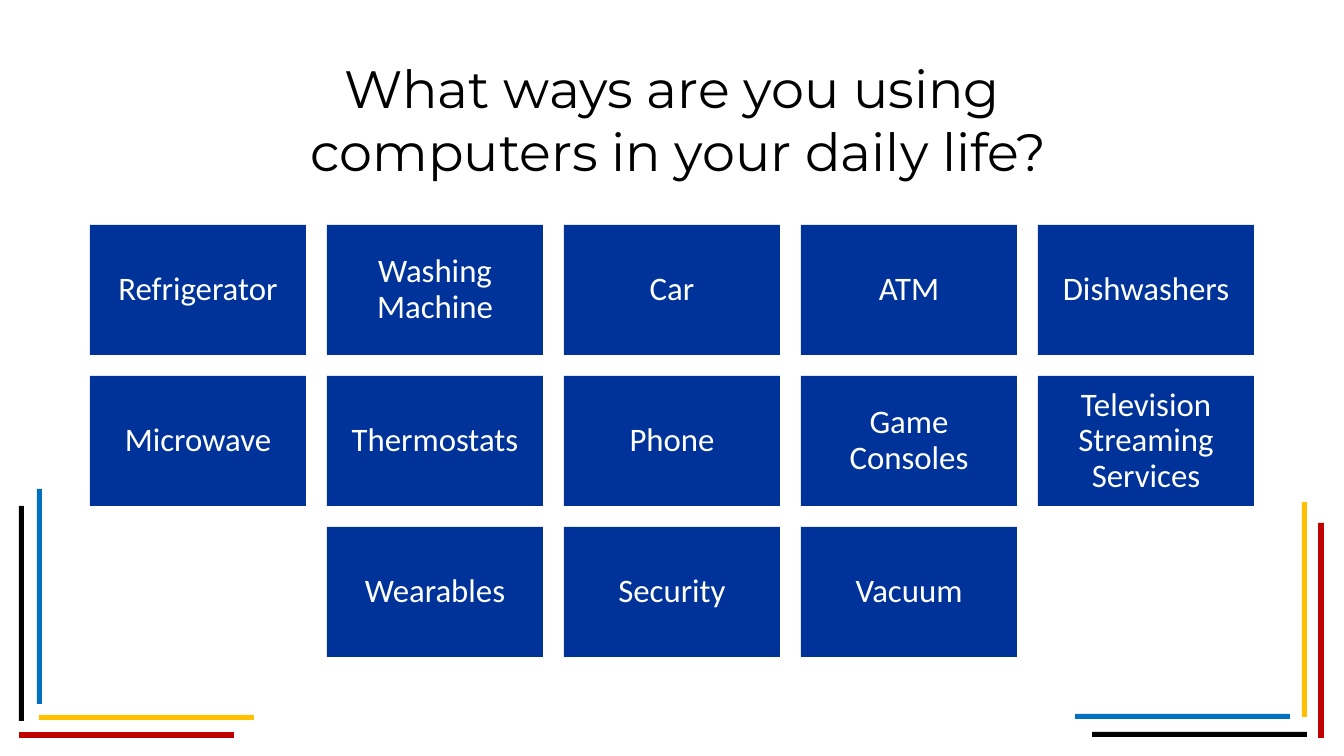
from dataclasses import dataclass
from typing import Any

from pptx import Presentation
from pptx import util as u
from pptx.dml import color
from pptx.enum import shapes, text

EMU_PER_PX = 914400 / 94.5
SLIDE_WIDTH, SLIDE_HEIGHT = 1344, 756

BLACK, WHITE, NAVY = "000000", "FFFFFF", "003399"
RED, YELLOW, BLUE = "C00000", "FFC000", "0070C0"

QUESTION = "What ways are you using\v computers in your daily life?"
DEVICE_ROWS = [
    ["Refrigerator", "Washing Machine", "Car", "ATM", "Dishwashers"],
    ["Microwave", "Thermostats", "Phone", "Game Consoles",
     "Television Streaming Services"],
    ["Wearables", "Security", "Vacuum"],
]

TILE_WIDTH, TILE_HEIGHT, TILE_GAP = 216, 130, 21
TILES_TOP, TILE_INSET = 225, 9
BAR_LENGTH = 215


@dataclass(frozen=True)
class Box:
    left: int
    top: int
    width: int
    height: int


@dataclass(frozen=True)
class Bar:
    left: int
    top: int
    thickness: int
    hue: str
    upright: bool

    def box(self) -> Box:
        size = (self.thickness, BAR_LENGTH)
        return Box(self.left, self.top, *(size if self.upright else size[::-1]))


@dataclass(frozen=True)
class Lettering:
    font: str
    points: int
    hue: str
    line_spacing: float
    inset: int


CORNER_BARS = [
    Bar(19, 506, 5, BLACK, True),
    Bar(19, 732, 6, RED, False),
    Bar(39, 715, 5, YELLOW, False),
    Bar(37, 489, 5, BLUE, True),
    Bar(1092, 732, 5, BLACK, False),
    Bar(1318, 523, 6, RED, True),
    Bar(1302, 502, 5, YELLOW, True),
    Bar(1075, 714, 5, BLUE, False),
]
QUESTION_BOX = Box(105, 55, 1134, 128)
QUESTION_LETTERING = Lettering("Montserrat", 40, BLACK, 1.0, 0)
DEVICE_LETTERING = Lettering("Calibri", 25, WHITE, 0.9, TILE_INSET)


def px(length: int) -> u.Emu:
    return u.Emu(round(length * EMU_PER_PX))


def rgb(hue: str) -> color.RGBColor:
    return color.RGBColor.from_string(hue)


def place(box: Box) -> list[u.Emu]:
    return [px(side) for side in (box.left, box.top, box.width, box.height)]


def apply(target: Any, values: dict[str, Any]) -> None:
    for attribute, value in values.items():
        setattr(target, attribute, value)


def draw_block(slide: Any, box: Box, hue: str) -> Any:
    block = slide.shapes.add_shape(shapes.MSO_SHAPE.RECTANGLE, *place(box))
    block.shadow.inherit = False
    block.fill.solid()
    block.fill.fore_color.rgb = rgb(hue)
    block.line.fill.background()
    return block


def write(holder: Any, words: str, style: Lettering) -> None:
    frame = holder.text_frame
    inset = px(style.inset)
    apply(frame, {
        "word_wrap": True,
        "vertical_anchor": text.MSO_ANCHOR.MIDDLE,
        "margin_left": inset,
        "margin_right": inset,
        "margin_top": inset,
        "margin_bottom": inset,
    })
    paragraph = frame.paragraphs[0]
    paragraph.text = words
    apply(paragraph, {
        "alignment": text.PP_ALIGN.CENTER,
        "line_spacing": style.line_spacing,
    })
    for run in paragraph.runs:
        apply(run.font, {"name": style.font, "size": u.Pt(style.points)})
        run.font.color.rgb = rgb(style.hue)


def draw_device_row(slide: Any, row: int, devices: list[str]) -> None:
    row_width = len(devices) * (TILE_WIDTH + TILE_GAP) - TILE_GAP
    row_left = (SLIDE_WIDTH - row_width) // 2
    top = TILES_TOP + row * (TILE_HEIGHT + TILE_GAP)
    for column, device in enumerate(devices):
        left = row_left + column * (TILE_WIDTH + TILE_GAP)
        tile = draw_block(slide, Box(left, top, TILE_WIDTH, TILE_HEIGHT), NAVY)
        write(tile, device, DEVICE_LETTERING)


def main() -> None:
    deck = Presentation()
    apply(deck, {"slide_width": px(SLIDE_WIDTH), "slide_height": px(SLIDE_HEIGHT)})
    slide = deck.slides.add_slide(deck.slide_layouts[6])
    for bar in CORNER_BARS:
        draw_block(slide, bar.box(), bar.hue)
    question = slide.shapes.add_textbox(*place(QUESTION_BOX))
    write(question, QUESTION, QUESTION_LETTERING)
    for row, devices in enumerate(DEVICE_ROWS):
        draw_device_row(slide, row, devices)
    deck.save("out.pptx")


if __name__ == "__main__":
    main()
